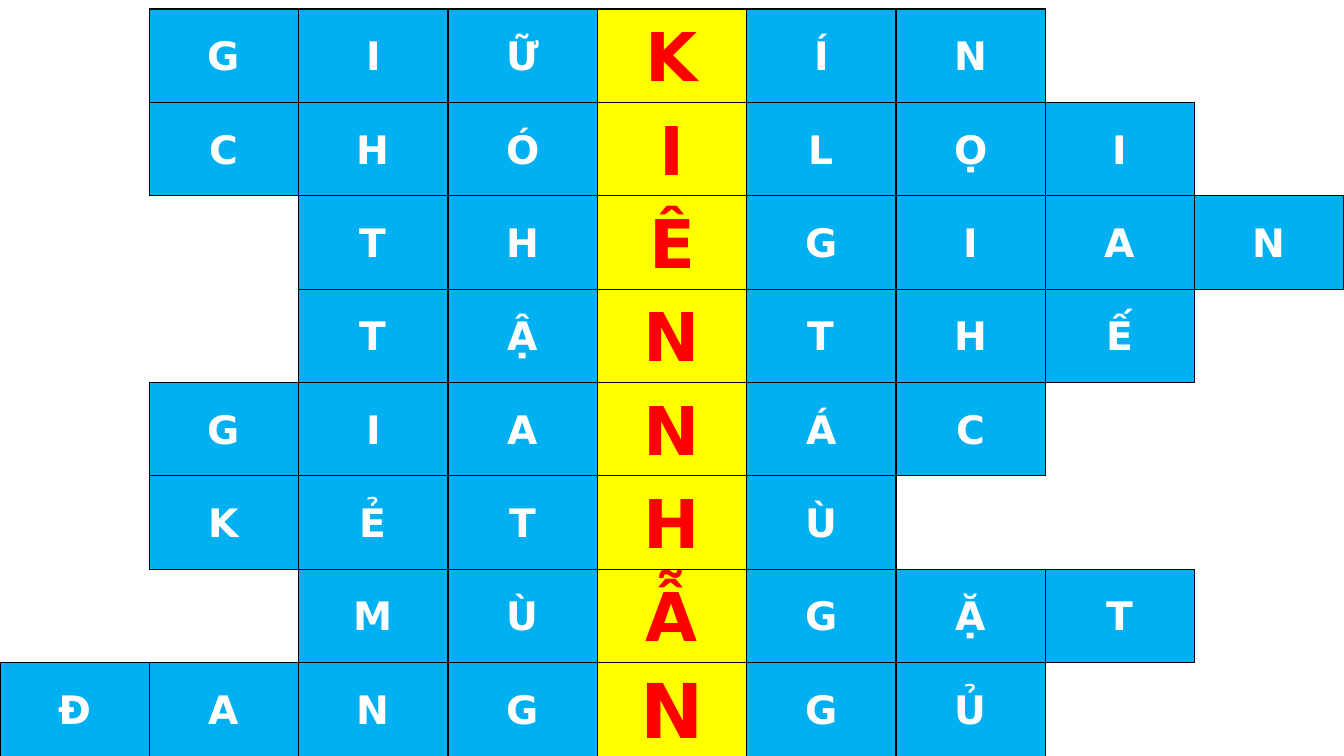
from dataclasses import dataclass

from lxml.etree import SubElement as Sub
from pptx import Presentation as Deck
from pptx.dml.color import RGBColor as Rgb
from pptx.enum.text import MSO_ANCHOR as Anchor, PP_ALIGN as Align
from pptx.oxml import parse_xml as to_xml
from pptx.oxml.ns import nsdecls, qn
from pptx.util import Inches, Pt

WORDS = [
    (1, "GIỮKÍN"),
    (1, "CHÓILỌI"),
    (2, "THÊGIAN"),
    (2, "TẬNTHẾ"),
    (1, "GIANÁC"),
    (1, "KẺTHÙ"),
    (2, "MÙẪGẶT"),
    (0, "ĐANGNGỦ"),
]
COLS = 9
KEY = 4
SIDES = {"L": (0, -1), "R": (0, 1), "T": (-1, 0), "B": (1, 0)}


@dataclass(frozen=True)
class Theme:
    """Colours, font and type sizes of the slide."""
    face: str = "DejaVu Sans"
    tile: str = "00B0F0"
    text: str = "FFFFFF"
    key: str = "FFFF00"
    mark: str = "FF0000"
    line: str = "000000"
    small: int = 28
    big: int = 48
    last: int = 54


def put(item, form):
    """Set each attribute named in the format."""
    for name, value in form.items():
        setattr(item, name, value)


class Board:
    """Draws crossword elements on one slide."""

    def __init__(self, slide, theme):
        """Keep the slide and its theme."""
        self.slide = slide
        self.theme = theme

    def grid(self, words, left, top, width, height):
        """Add the crossword table."""
        frame = self.slide.shapes.add_table(
            len(words), COLS, Inches(left), Inches(top), Inches(width), Inches(height))
        table = frame.table
        put(table, {"first_row": False, "horz_banding": False})
        chars = {(row, start + i): char
                 for row, (start, word) in enumerate(words)
                 for i, char in enumerate(word)}
        for row in range(len(words)):
            for col in range(COLS):
                cell = table.cell(row, col)
                spot = row, col
                if spot in chars:
                    self.tile(cell, chars[spot], col == KEY, row == len(words) - 1)
                else:
                    cell.fill.background()
                self.edge(cell, spot, chars)

    def tile(self, cell, char, key, last):
        """Fill one cell and set its letter."""
        look = self.theme
        cell.fill.solid()
        cell.fill.fore_color.rgb = Rgb.from_string(look.key if key else look.tile)
        put(cell, {"vertical_anchor": Anchor.MIDDLE,
                   "margin_left": Inches(0.07), "margin_right": Inches(0.07),
                   "margin_top": 0, "margin_bottom": 0})
        para = cell.text_frame.paragraphs[0]
        put(para, {"alignment": Align.CENTER, "line_spacing": 1.07})
        run = para.add_run()
        run.text = char
        size = (look.last if last else look.big) if key else look.small
        put(run.font, {"name": look.face, "size": Pt(size), "bold": True})
        run.font.color.rgb = Rgb.from_string(look.mark if key else look.text)

    def edge(self, cell, spot, chars):
        """Line each side that touches a letter."""
        props = cell._tc.get_or_add_tcPr()
        for i, (side, (down, over)) in enumerate(SIDES.items()):
            line = to_xml(f'<a:ln{side} {nsdecls("a")} w="{Pt(1)}"/>')
            if spot in chars or (spot[0] + down, spot[1] + over) in chars:
                fill = Sub(line, qn("a:solidFill"))
                Sub(fill, qn("a:srgbClr"), val=self.theme.line)
            else:
                Sub(line, qn("a:noFill"))
            props.insert(i, line)


def main():
    """Build and save the slide."""
    deck = Deck()
    put(deck, {"slide_width": Inches(13.33), "slide_height": Inches(7.5)})
    slide = deck.slides.add_slide(deck.slide_layouts[6])
    Board(slide, Theme()).grid(WORDS, 0, 0.09, 13.33, 7.41)
    deck.save("out.pptx")


if __name__ == "__main__":
    main()
